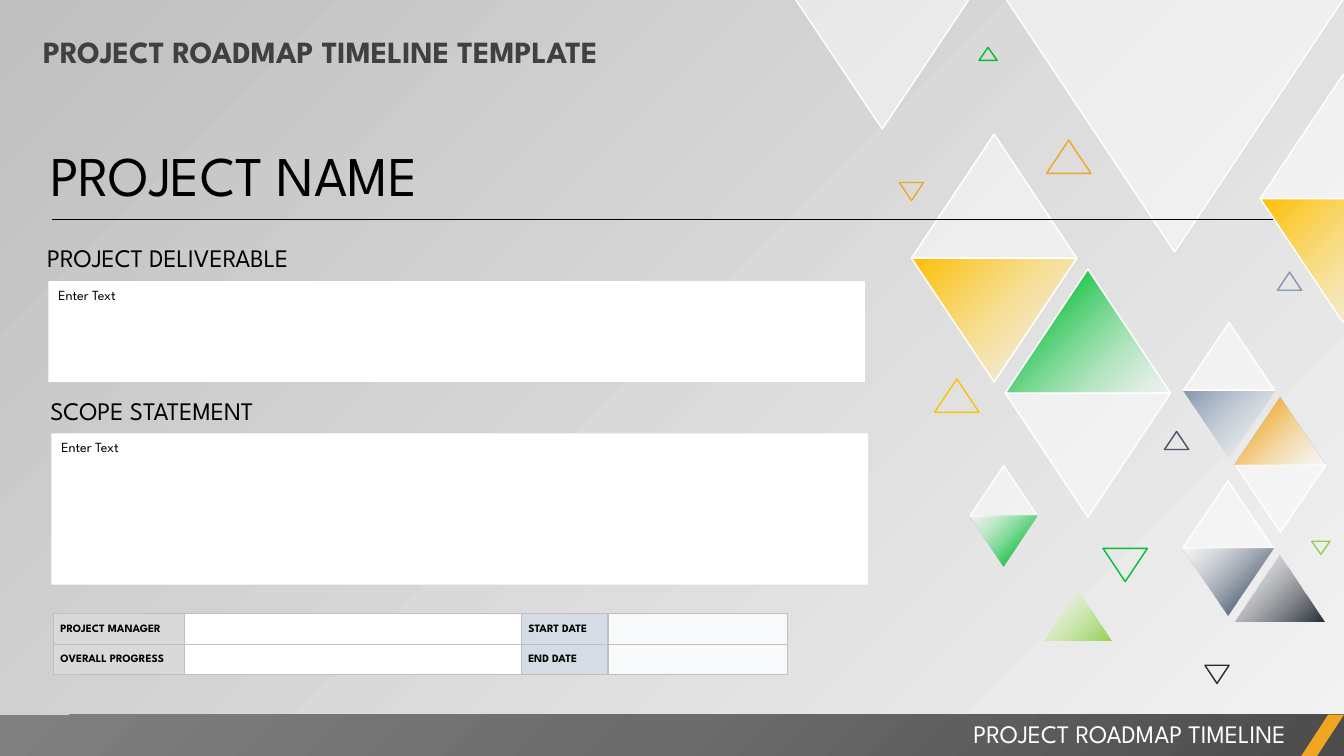
from pptx import Presentation
from pptx.dml.color import RGBColor
from pptx.enum.shapes import MSO_CONNECTOR, MSO_SHAPE
from pptx.enum.text import MSO_ANCHOR, PP_ALIGN
from pptx.oxml import parse_xml
from pptx.oxml.ns import nsdecls, qn
from pptx.util import Pt

PX = 9144
FONT = "League Spartan"
NS = nsdecls("a")
SLANT = '<a:lin ang="13500000" scaled="0"/>'
GLOW = '<a:path path="circle"><a:fillToRect l="100000" t="100000"/></a:path>'
hue = RGBColor.from_string


def blend(solid, stops, way):
    marks = "".join(
        f'<a:gs pos="{pos * 1000}"><a:srgbClr val="{tone}">'
        f'<a:alpha val="{alpha * 1000}"/></a:srgbClr></a:gs>'
        for pos, tone, alpha in stops)
    grad = parse_xml(f'<a:gradFill {NS} rotWithShape="1">'
                     f'<a:gsLst>{marks}</a:gsLst>{way}</a:gradFill>')
    solid.getparent().replace(solid, grad)


def write(frame, words, size, tone="000000", bold=False, align=PP_ALIGN.LEFT):
    frame.word_wrap = True
    para = frame.paragraphs[0]
    para.alignment = align
    run = para.add_run()
    run.text = words
    run.font.name = FONT
    run.font.size = Pt(size)
    run.font.bold = bold
    run.font.color.rgb = hue(tone)


deck = Presentation()
deck.slide_width = 1333 * PX
deck.slide_height = 750 * PX
slide = deck.slides.add_slide(deck.slide_layouts[6])
shapes = slide.shapes

slide.background.fill.solid()
back = slide._element.xpath(".//p:bgPr/a:solidFill")[0]
blend(back, [(0, "F2F2F2", 40), (100, "BFBFBF", 100)], SLANT)

panes = [(904, 133, 164, 0), (997, 390, 164, 180), (997, -2, 336, 180),
         (1173, 477, 90, 0), (1174, 320, 90, 0), (1225, 461, 90, 180),
         (962, 462, 67, 0), (1250, 74, 164, 0), (788, -2, 174, 180)]
fades = [(904, 256, 164, 180, "FFC000"), (1224, 550, 90, 0, "222A35"),
         (1174, 388, 90, 180, "8497B0"), (1035, 585, 67, 0, "92D050"),
         (1250, 197, 164, 180, "FFC000")]
glows = [(997, 267, 164, 0, "00BD32"), (1173, 544, 90, 180, "44546A"),
         (1225, 394, 90, 0, "F0A622"), (962, 512, 67, 180, "00BD32")]
rings = [(1094, 544, 44, 180, "00BD32"), (927, 376, 44, 0, "FFC000"),
         (1155, 428, 24, 0, "44546A"), (1195, 660, 24, 180, "222A35"),
         (892, 181, 24, 180, "F0A622"), (1267, 270, 24, 0, "8497B0"),
         (971, 47, 18, 0, "00BD32"), (1301, 537, 18, 180, "92D050"),
         (1038, 139, 44, 0, "F0A622")]
parts = [("pane", *pane, "FFFFFF") for pane in panes]
parts += [("fade", *fade) for fade in fades]
parts += [("glow", *glow) for glow in glows]
parts += [("ring", *ring) for ring in rings]

for kind, left, top, width, turn, tone in parts:
    tri = shapes.add_shape(MSO_SHAPE.ISOSCELES_TRIANGLE, left * PX, top * PX,
                           width * PX, width * 3 // 4 * PX)
    tri.rotation = turn
    tri.shadow.inherit = False
    if kind in ("pane", "ring") or width == 164:
        tri.line.color.rgb = hue(tone if kind == "ring" else "FFFFFF")
        tri.line.width = Pt(1)
    else:
        tri.line.fill.background()
    if kind == "ring":
        tri.fill.background()
        continue
    tri.fill.solid()
    tri.fill.fore_color.rgb = hue(tone)
    solid = tri._element.spPr.find(qn("a:solidFill"))
    if kind == "pane":
        solid[0].append(parse_xml(f'<a:alpha {NS} val="50000"/>'))
    elif kind == "fade":
        blend(solid, [(0, tone, 100), (100, "FFFFFF", 50)], SLANT)
    else:
        blend(solid, [(0, "FFFFFF", 50), (82, tone, 100)], SLANT)

path = shapes.build_freeform(0, 709, scale=PX)
path.add_line_segments([(1333, 709), (1333, 751), (0, 751)], close=True)
foot = path.convert_to_shape()
foot.shadow.inherit = False
foot.line.fill.background()
foot.fill.solid()
blend(foot._element.spPr.find(qn("a:solidFill")),
      [(0, "4C4C4C", 100), (50, "6B6B6B", 100), (100, "808080", 100)], GLOW)

slash = shapes.add_shape(MSO_SHAPE.PARALLELOGRAM, 1290 * PX, 709 * PX, 43 * PX, 42 * PX)
slash.adjustments[0] = 0.65
slash.shadow.inherit = False
slash.line.fill.background()
slash.fill.solid()
slash.fill.fore_color.rgb = hue("F0A622")

labels = [
    ((33, 28, 861, 47), "PROJECT ROADMAP TIMELINE TEMPLATE", 22, "404040", True, PP_ALIGN.LEFT),
    ((525, 708, 760, 40), "PROJECT ROADMAP TIMELINE", 18, "FFFFFF", False, PP_ALIGN.RIGHT),
    ((40, 135, 1227, 77), "PROJECT NAME", 40, "000000", False, PP_ALIGN.LEFT),
    ((37, 236, 305, 40), "PROJECT DELIVERABLE", 18, "000000", False, PP_ALIGN.LEFT),
    ((40, 387, 305, 40), "SCOPE STATEMENT", 18, "000000", False, PP_ALIGN.LEFT),
]
for box, *style in labels:
    label = shapes.add_textbox(*[n * PX for n in box])
    write(label.text_frame, *style)

rule = shapes.add_connector(MSO_CONNECTOR.STRAIGHT, 52 * PX, 218 * PX, 1263 * PX, 218 * PX)
rule.line.color.rgb = hue("000000")
rule.line.width = Pt(0.5)
rule._element.spPr.append(parse_xml(f"<a:effectLst {NS}/>"))

for box in [(48, 279, 810, 100), (51, 430, 810, 150)]:
    field = shapes.add_shape(MSO_SHAPE.RECTANGLE, *[n * PX for n in box])
    field.shadow.inherit = False
    field.line.fill.background()
    field.fill.solid()
    field.fill.fore_color.rgb = hue("FFFFFF")
    field.text_frame.vertical_anchor = MSO_ANCHOR.TOP
    write(field.text_frame, "Enter Text", 10)

rows = [["PROJECT MANAGER", "", "START DATE", ""],
        ["OVERALL PROGRESS", "", "END DATE", ""]]
widths = [130, 334, 86, 178]
tones = ["D9D9D9", "FFFFFF", "D6DCE5", "F7F9FB"]
grid = shapes.add_table(2, 4, 53 * PX, 609 * PX, sum(widths) * PX, 60 * PX).table
grid.first_row = False
grid.horz_banding = False
for col, width in zip(grid.columns, widths):
    col.width = width * PX
for r, row in enumerate(rows):
    grid.rows[r].height = 30 * PX
    for c, words in enumerate(row):
        cell = grid.cell(r, c)
        cell.vertical_anchor = MSO_ANCHOR.MIDDLE
        cell.margin_left = cell.margin_right = 7 * PX
        cell.margin_top = cell.margin_bottom = 0
        cell.fill.solid()
        cell.fill.fore_color.rgb = hue(tones[c])
        para = cell.text_frame.paragraphs[0]
        para.line_spacing = 1.07
        if words:
            write(cell.text_frame, words, 8, bold=True)
        else:
            para._p.get_or_add_endParaRPr().set("sz", "800")
        for n, side in enumerate("LRTB"):
            edge = parse_xml(f'<a:ln{side} {NS} w="12700"><a:solidFill>'
                             f'<a:srgbClr val="BFBFBF"/></a:solidFill></a:ln{side}>')
            cell._tc.tcPr.insert(n, edge)

deck.save("out.pptx")
